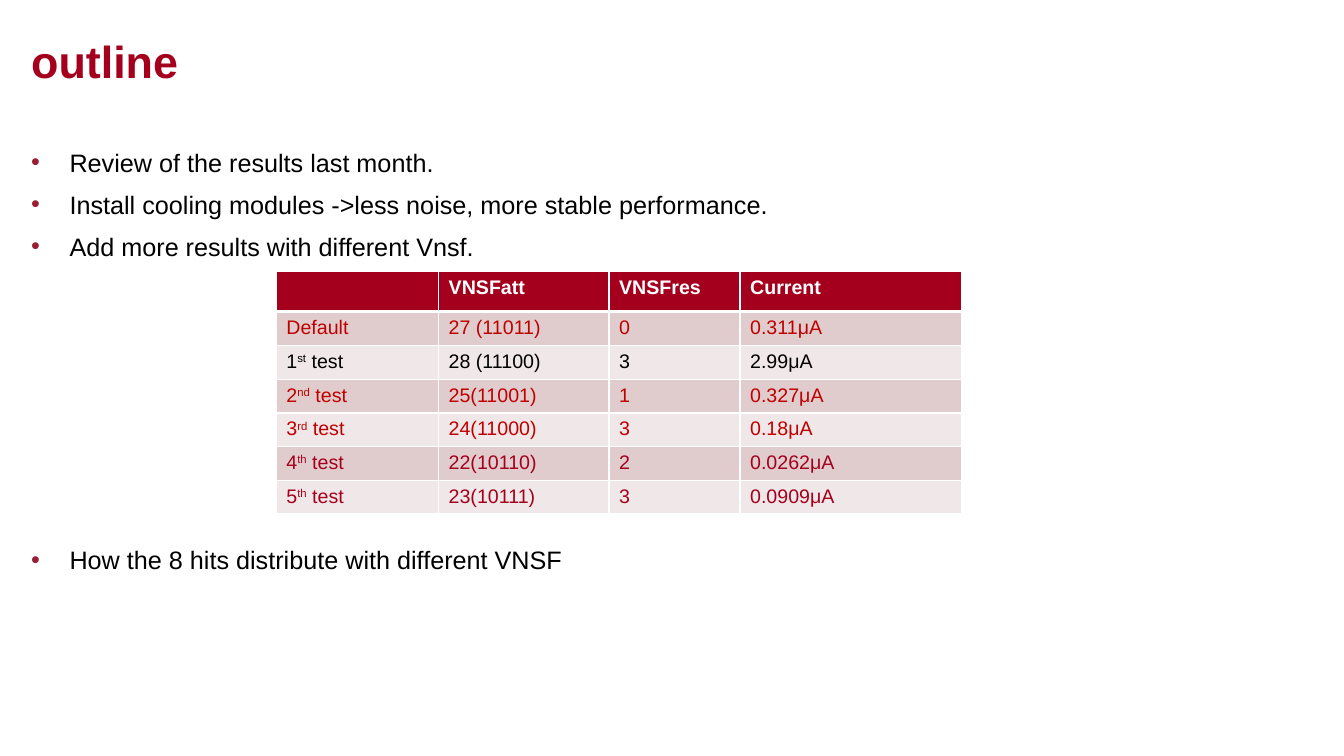
from pptx import Presentation
from pptx.dml.color import RGBColor
from pptx.enum import text
from pptx.oxml import parse_xml
from pptx.oxml.ns import nsdecls
from pptx.util import Inches, Pt

RED, DARK, BLACK, WHITE = "C00000", "A4001D", "000000", "FFFFFF"
BANDS = ("E0CCCD", "F0E7E8")
TITLE = "outline"
POINTS = [
    ("Review of the results last month.", 0),
    ("Install cooling modules ->less noise, more stable performance.", 0),
    ("Add more results with different Vnsf.", 0),
    ("How the 8 hits distribute with different VNSF", 194),
]
HEAD = ("", "VNSFatt", "VNSFres", "Current")
ROWS = [
    (RED, ("Default",), "27 (11011)", "0", "0.311μA"),
    (BLACK, ("1", "st", " test"), "28 (11100)", "3", "2.99μA"),
    (RED, ("2", "nd", " test"), "25(11001)", "1", "0.327μA"),
    (RED, ("3", "rd", " test"), "24(11000)", "3", "0.18μA"),
    (DARK, ("4", "th", " test"), "22(10110)", "2", "0.0262μA"),
    (DARK, ("5", "th", " test"), "23(10111)", "3", "0.0909μA"),
]
COLS = (1.61, 1.69, 1.3, 2.2)
HIGH = (0.31, 0.34) + (0.32,) * 5


def color(code):
    return RGBColor.from_string(code)


def add_run(para, words, size, code, bold=False):
    run = para.add_run()
    run.text = words
    font = run.font
    font.name, font.size, font.bold = "Arial", Pt(size), bold
    font.color.rgb = color(code)
    return run


def clear(frame):
    frame.word_wrap = True
    frame.margin_left = frame.margin_top = 0
    frame.margin_right = frame.margin_bottom = 0


def add_edge(cell, side, width):
    cell._tc.get_or_add_tcPr().append(parse_xml(
        f'<a:{side} {nsdecls("a")} w="{Pt(width)}"><a:solidFill>'
        f'<a:srgbClr val="{WHITE}"/></a:solidFill></a:{side}>'))


def fill_cell(cell, parts, code, back, bold, top, low):
    para = cell.text_frame.paragraphs[0]
    for spot, part in enumerate(parts):
        run = add_run(para, part, 14, code, bold)
        if spot == 1:
            run.font._element.set("baseline", "30000")
    for side, width in (("lnL", 1), ("lnR", 1), ("lnT", top), ("lnB", low)):
        add_edge(cell, side, width)
    cell.fill.solid()
    cell.fill.fore_color.rgb = color(back)


def add_title(slide):
    title = slide.shapes.title
    title.left, title.top = Inches(0.31), Inches(0.16)
    title.width, title.height = Inches(11.5), Inches(0.71)
    frame = title.text_frame
    clear(frame)
    frame.vertical_anchor = text.MSO_ANCHOR.BOTTOM
    para = frame.paragraphs[0]
    para.alignment = text.PP_ALIGN.LEFT
    add_run(para, TITLE, 32, DARK, True)


def add_points(slide):
    box = slide.shapes.add_textbox(
        Inches(0.31), Inches(1.4), Inches(12.15), Inches(5.8))
    frame = box.text_frame
    clear(frame)
    for spot, (words, gap) in enumerate(POINTS):
        para = frame.add_paragraph() if spot else frame.paragraphs[0]
        para.line_spacing, para.space_after = 1.2, Pt(4)
        if gap:
            para.space_before = Pt(gap)
        props = para._p.get_or_add_pPr()
        props.set("marL", str(Inches(0.38)))
        props.set("indent", str(-Inches(0.38)))
        for mark in (f'<a:buClr {nsdecls("a")}><a:srgbClr val="981E32"/></a:buClr>',
                     f'<a:buFont {nsdecls("a")} typeface="Arial"/>',
                     f'<a:buChar {nsdecls("a")} char="•"/>'):
            props.append(parse_xml(mark))
        add_run(para, words, 18, BLACK)


def add_tests(slide):
    table = slide.shapes.add_table(
        len(HIGH), len(COLS), Inches(2.74), Inches(2.69),
        Inches(sum(COLS)), Inches(sum(HIGH))).table
    for col, width in zip(table.columns, COLS):
        col.width = Inches(width)
    for row, height in zip(table.rows, HIGH):
        row.height = Inches(height)
    for c, words in enumerate(HEAD):
        fill_cell(table.cell(0, c), (words,), WHITE, DARK, True, 1, 3)
    for r, (code, name, *data) in enumerate(ROWS, 1):
        top = 3 if r == 1 else 1
        for c, parts in enumerate([name] + [(item,) for item in data]):
            fill_cell(table.cell(r, c), parts, code, BANDS[(r - 1) % 2],
                      False, top, 1)


def main():
    deck = Presentation()
    deck.slide_width, deck.slide_height = Inches(13.33), Inches(7.5)
    slide = deck.slides.add_slide(deck.slide_layouts[5])
    add_title(slide)
    add_points(slide)
    add_tests(slide)
    deck.save("out.pptx")


if __name__ == "__main__":
    main()
